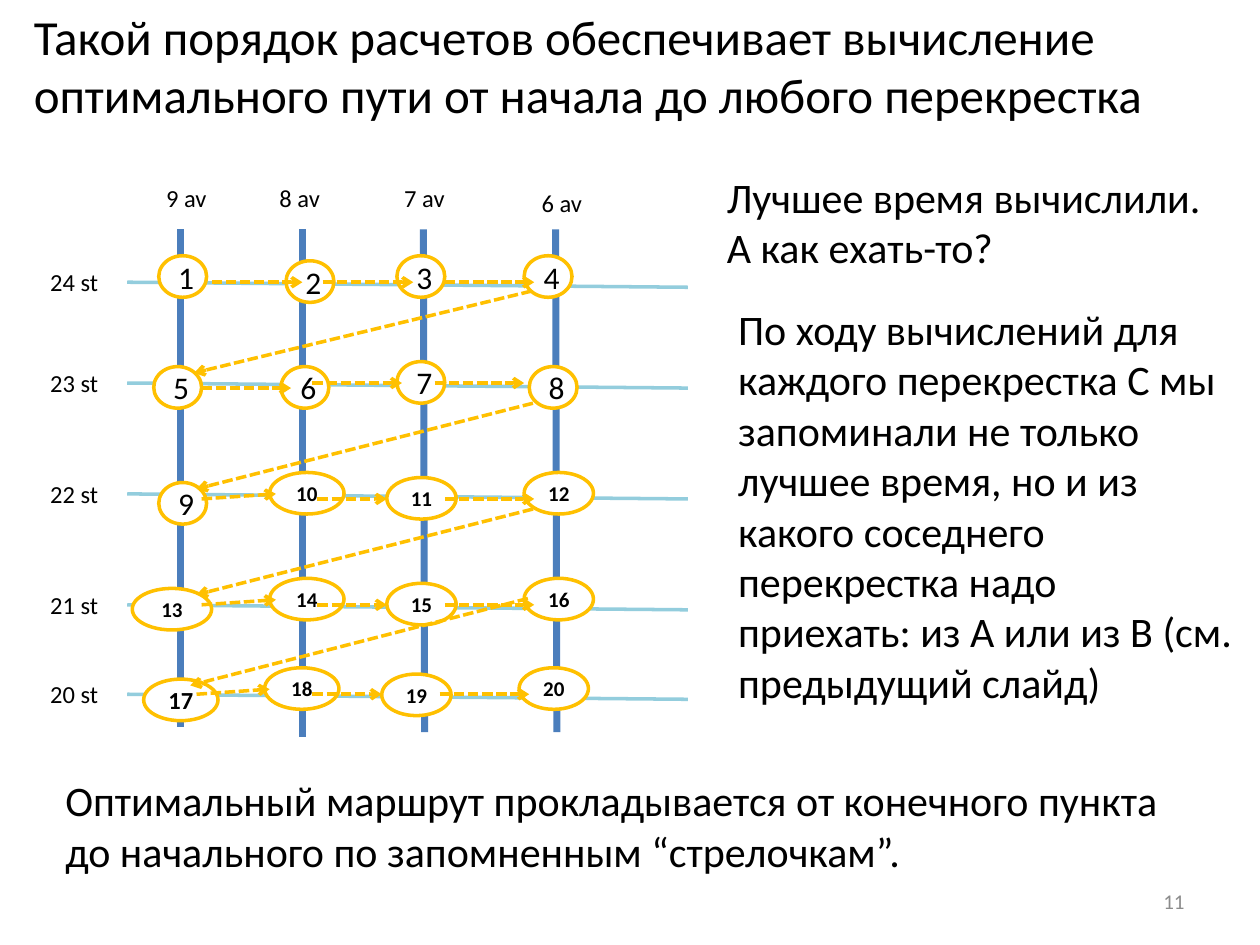
import pptx
import pptx.util
import pptx.dml.color
import pptx.enum.dml
import pptx.enum.shapes
import pptx.enum.text
import pptx.oxml.ns
from lxml import etree

PX = 9144  # 100 px to the inch
FONT = "Calibri"
COLORS = {"text": "000000", "number": "8C8C8C", "avenue": "4B7EBC",
          "street": "93CDDD", "route": "FFC000", "node": "FFFFFF"}

# Content: paragraphs, box (left, top, width, height), size
TEXTS = [
    (["Такой порядок расчетов обеспечивает вычисление оптимального пути "
      "от начала до любого перекрестка"], (17, 0, 966, 104), 28),
    (["Лучшее время вычислили.", "А как ехать-то?"], (567, 131, 412, 91), 24),
    (["По ходу вычислений для каждого перекрестка C мы запоминали не только "
      "лучшее время, но и из какого соседнего перекрестка надо приехать: "
      "из A или из B (см. предыдущий слайд)"], (576, 236, 412, 333), 24),
    (["Оптимальный маршрут прокладывается от конечного пункта до начального "
      "по запомненным “стрелочкам”."], (42, 610, 916, 91), 24),
]
# Label, top x, bottom x, bottom y, label left, label top
AVENUES = [("9 av", 143, 143, 577, 122, 140), ("8 av", 240, 240, 585, 212, 140),
           ("7 av", 336, 337, 581, 311, 140), ("6 av", 441, 442, 581, 420, 144)]
STREETS = [("24 st", 224), ("23 st", 304), ("22 st", 392), ("21 st", 480), ("20 st", 551)]

# Crossings in order of calculation: left, top, width
CROSSINGS = [
    (126, 203, 38), (227, 207, 38), (315, 203, 38), (416, 203, 38),
    (122, 291, 38), (223, 291, 38), (315, 287, 38), (420, 291, 38),
    (126, 383, 38), (214, 375, 59), (307, 379, 55), (416, 375, 55),
    (105, 467, 63), (214, 459, 59), (307, 463, 55), (416, 459, 55),
    (114, 539, 59), (210, 530, 59), (303, 535, 55), (412, 530, 55),
]
# Steps between consecutive crossings: from x, from y, to x, to y
STEPS = [
    (168, 224, 240, 224), (256, 224, 328, 224), (353, 224, 424, 224), (422, 231, 154, 296),
    (160, 308, 231, 308), (248, 304, 319, 304), (345, 304, 416, 304), (423, 320, 156, 388),
    (160, 396, 219, 392), (252, 396, 307, 396), (353, 396, 424, 396), (423, 404, 156, 472),
    (160, 480, 219, 476), (252, 480, 307, 480), (353, 480, 424, 480), (419, 475, 151, 544),
    (156, 551, 214, 547), (248, 551, 303, 551), (349, 551, 420, 551),
]

ALIGN = pptx.enum.text.PP_ALIGN
ANCHOR = pptx.enum.text.MSO_ANCHOR
FIT = pptx.enum.text.MSO_AUTO_SIZE.SHAPE_TO_FIT_TEXT


def emu(*lengths):
    return [pptx.util.Emu(length * PX) for length in lengths]


def rgb(name):
    return pptx.dml.color.RGBColor.from_string(COLORS[name])


def write(frame, lines, size, color="text", bold=False, align=None, **frame_format):
    for name, value in frame_format.items():
        setattr(frame, name, value)
    for index, line in enumerate(lines):
        paragraph = frame.add_paragraph() if index else frame.paragraphs[0]
        paragraph.alignment = align
        run = paragraph.add_run()
        run.text = line
        font_format = {"name": FONT, "size": pptx.util.Pt(size), "bold": bold}
        for name, value in font_format.items():
            setattr(run.font, name, value)
        run.font.color.rgb = rgb(color)


def add_text(shapes, lines, box, size, **options):
    write(shapes.add_textbox(*emu(*box)).text_frame, lines, size, **options)


def add_line(shapes, ends, color, width):
    line = shapes.add_connector(pptx.enum.shapes.MSO_CONNECTOR.STRAIGHT, *emu(*ends))
    line.line.color.rgb = rgb(color)
    line.line.width = pptx.util.Pt(width)
    etree.SubElement(line._element.spPr, pptx.oxml.ns.qn("a:effectLst"))
    return line


def add_crossing(shapes, number, left, top, width):
    oval = shapes.add_shape(pptx.enum.shapes.MSO_SHAPE.OVAL, *emu(left, top, width, 33))
    oval.shadow.inherit = False
    oval.fill.solid()
    oval.fill.fore_color.rgb = rgb("node")
    oval.line.color.rgb = rgb("route")
    oval.line.width = pptx.util.Pt(2)
    size = 18 if number < 10 else 14 if number == 17 else 12
    write(oval.text_frame, [str(number)], size, bold=number >= 10,
          align=ALIGN.CENTER, vertical_anchor=ANCHOR.MIDDLE, word_wrap=True)


def add_step(shapes, ends):
    step = add_line(shapes, ends, "route", 2)
    step.line.dash_style = pptx.enum.dml.MSO_LINE.SQUARE_DOT
    etree.SubElement(step.line._get_or_add_ln(), pptx.oxml.ns.qn("a:tailEnd"), type="arrow")


def main():
    deck = pptx.Presentation()
    deck.slide_width, deck.slide_height = emu(1000, 750)
    shapes = deck.slides.add_slide(deck.slide_layouts[6]).shapes

    # Street map
    street_map = shapes.add_group_shape().shapes
    for label, top_x, bottom_x, bottom, label_left, label_top in AVENUES:
        add_line(street_map, (top_x, 182, bottom_x, bottom), "avenue", 4)
        add_text(street_map, [label], (label_left, label_top, 53, 34), 14,
                 word_wrap=False, auto_size=FIT)
    for label, y in STREETS:
        add_line(street_map, (101, y, 546, y + 4), "street", 2)
        add_text(street_map, [label], (30, y - 17, 59, 34), 14,
                 word_wrap=False, auto_size=FIT)

    # Numbered crossings and the order of calculation
    for number, crossing in enumerate(CROSSINGS, 1):
        add_crossing(shapes, number, *crossing)
    for ends in STEPS:
        add_step(shapes, ends)

    # Title, comments and slide number
    for lines, box, size in TEXTS:
        add_text(shapes, lines, box, size, word_wrap=True, auto_size=FIT)
    add_text(shapes, ["11"], (717, 695, 233, 40), 12, color="number",
             align=ALIGN.RIGHT, vertical_anchor=ANCHOR.MIDDLE, word_wrap=True)

    deck.save("out.pptx")


if __name__ == "__main__":
    main()
